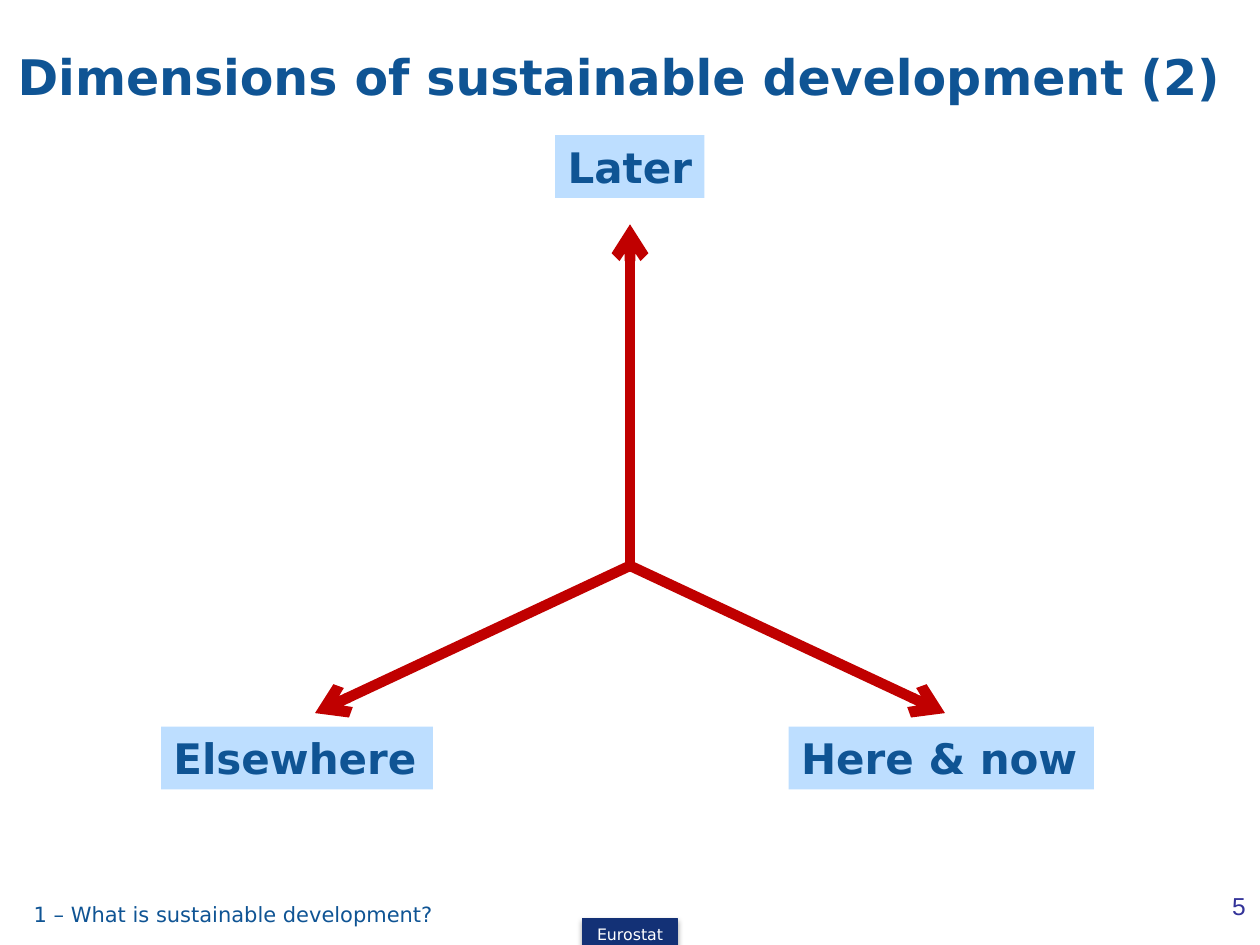
from lxml.etree import SubElement
from pptx import Presentation
from pptx.dml.color import RGBColor
from pptx.enum.shapes import MSO_CONNECTOR as Connector, MSO_SHAPE as Shape
from pptx.enum.text import MSO_ANCHOR as Anchor, PP_ALIGN as Align
from pptx.oxml.ns import qn
from pptx.util import Pt

COLOURS = {
    "blue": "0F5494",
    "label": "BDDEFF",
    "axis": "C00000",
    "badge": "133176",
    "number": "333399",
    "white": "FFFFFF",
}
MAIN_FONT = "DejaVu Sans"


def colour(name):
    return RGBColor.from_string(COLOURS[name])


class SlideBuilder:
    def __init__(self, deck):
        self.page = deck.slides.add_slide(deck.slide_layouts[5])
        self.shapes = self.page.shapes

    def fill_text(self, box, text, size, ink="blue", bold=False, font=MAIN_FONT,
                  align=Align.LEFT, anchor=Anchor.TOP, wrap=True):
        frame = box.text_frame
        frame.text = text
        frame.word_wrap = wrap
        frame.vertical_anchor = anchor
        para = frame.paragraphs[0]
        para.alignment = align
        for span in para.runs:
            span.font.name = font
            span.font.size = Pt(size)
            span.font.bold = bold
            span.font.color.rgb = colour(ink)

    def title(self, text, left, top, width, height):
        box = self.shapes.title
        box.left, box.top = Pt(left), Pt(top)
        box.width, box.height = Pt(width), Pt(height)
        self.fill_text(box, text, 28, bold=True, anchor=Anchor.MIDDLE)
        indent = Pt(28)
        properties = box.text_frame.paragraphs[0]._p.get_or_add_pPr()
        properties.set("marL", str(indent))
        properties.set("indent", str(-indent))

    def text(self, text, left, top, width, height, size, **style):
        box = self.shapes.add_textbox(Pt(left), Pt(top), Pt(width), Pt(height))
        self.fill_text(box, text, size, **style)

    def panel(self, left, top, width, height, fill):
        box = self.shapes.add_shape(
            Shape.RECTANGLE, Pt(left), Pt(top), Pt(width), Pt(height))
        box.shadow.inherit = False
        box.fill.solid()
        box.fill.fore_color.rgb = colour(fill)
        box.line.fill.background()
        return box

    def label(self, text, left, top, width):
        box = self.panel(left, top, width, 36, "label")
        self.fill_text(box, text, 24, bold=True, wrap=False)

    def badge(self, text, left, top, width, height):
        box = self.panel(left, top, width, height, "badge")
        box.line.color.rgb = colour("badge")
        box.line.width = Pt(0.75)
        effects = box._element.spPr.find(qn("a:effectLst"))
        shadow = SubElement(effects, qn("a:outerShdw"), blurRad=str(Pt(3.1)),
                            dist=str(Pt(1.8)), dir="5400000", rotWithShape="0")
        tint = SubElement(shadow, qn("a:srgbClr"), val="000000")
        SubElement(tint, qn("a:alpha"), val="35000")
        self.fill_text(box, text, 9, ink="white", align=Align.CENTER,
                       anchor=Anchor.MIDDLE)

    def arrow(self, start, end):
        line = self.shapes.add_connector(
            Connector.STRAIGHT, *(Pt(value) for value in (*start, *end)))
        line.line.color.rgb = colour("axis")
        line.line.width = Pt(6)
        outline = line._element.spPr.find(qn("a:ln"))
        SubElement(outline, qn("a:tailEnd"), type="arrow")
        SubElement(line._element.spPr, qn("a:effectLst"))


def main():
    deck = Presentation()
    deck.slide_width, deck.slide_height = Pt(720), Pt(540)
    slide = SlideBuilder(deck)

    # Three axes from a common centre
    centre_x, centre_y = 360, 323.3
    reach, drop = 180, 84.2
    slide.arrow((centre_x, centre_y + 3.6), (centre_x, 128.2))
    for side in (1, -1):
        slide.arrow((centre_x, centre_y),
                    (centre_x + side * reach, centre_y + drop))

    # Axis labels
    for text, left, top, width in (
        ("Here & now", 450.7, 415.2, 174.4),
        ("Elsewhere", 92, 415.2, 155.3),
        ("Later", 317.3, 77.2, 85.2),
    ):
        slide.label(text, left, top, width)

    # Title
    slide.title("Dimensions of sustainable development (2)",
                2.9, 20.9, 705.6, 45.4)

    # Footer
    slide.text("5", 697, 505.4, 20.2, 21.6, 14, ink="number", font="Arial")
    slide.badge("Eurostat", 333, 525, 54, 17.3)
    slide.text("1 – What is sustainable development?",
               12.2, 511.9, 363.6, 25.9, 12)

    deck.save("out.pptx")


if __name__ == "__main__":
    main()
